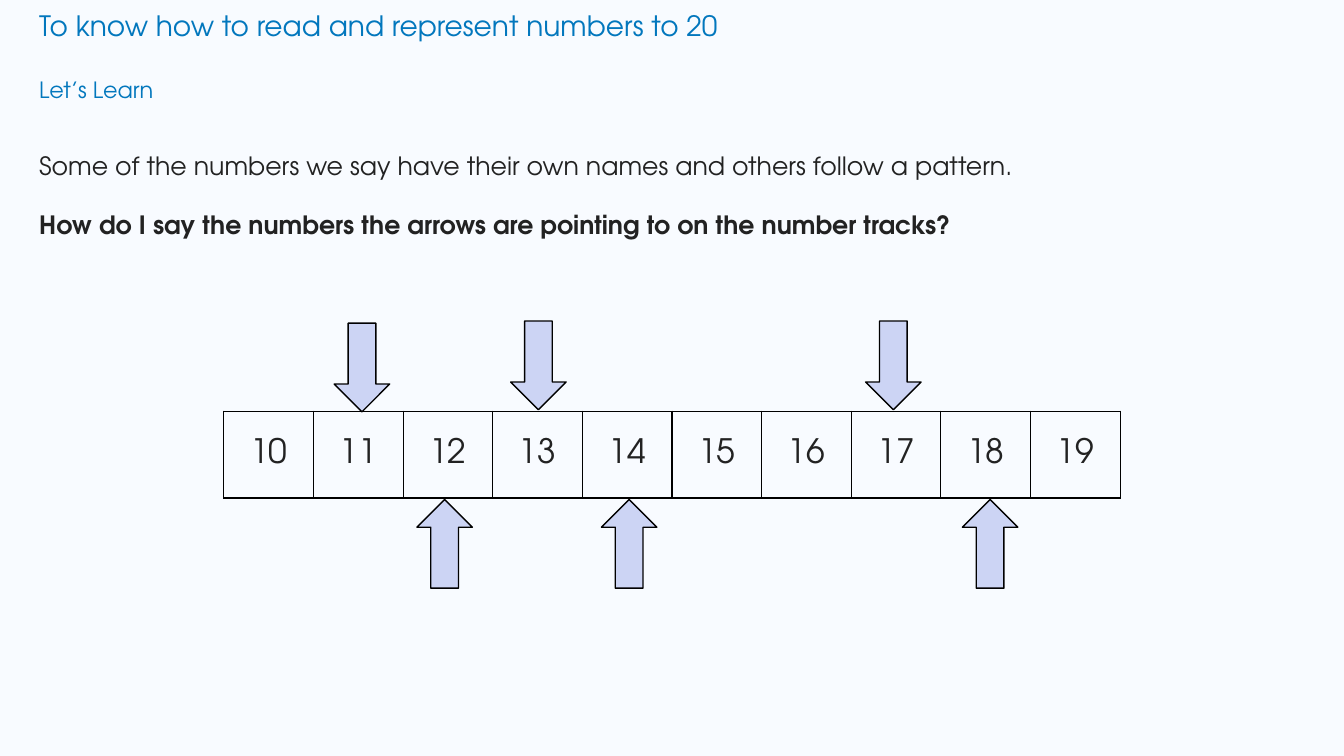
from dataclasses import dataclass

from lxml import etree
from pptx import Presentation
from pptx import util as u
from pptx.dml.color import RGBColor
from pptx.enum import shapes, text
from pptx.oxml import ns

PX = 9144  # EMU per px, 100 px to the inch
FONT = "TeX Gyre Adventor"
COLOURS = {
    "background": "F8FBFF",
    "heading": "0277BD",
    "body": "222222",
    "arrow": "CCD4F4",
    "line": "000000",
}
DOWN, UP = 90, 270
ARROW_LENGTH, ARROW_WIDTH = 88, 55


@dataclass
class TextBlock:
    left: int
    top: int
    width: int
    height: int
    size: int
    colour: str
    lines: list[tuple[str, bool]]  # wording, bold
    spacing: float = 1.0


@dataclass
class Arrow:
    left: int
    top: int
    rotation: int


@dataclass
class NumberTrack:
    left: int
    top: int
    width: int
    height: int
    numbers: range


TEXT_BLOCKS = [
    TextBlock(29, 4, 1234, 44, 20, "heading",
              [("To know how to read and represent numbers to 20", False)]),
    TextBlock(29, 71, 297, 46, 16, "heading", [("Let’s Learn", False)]),
    TextBlock(29, 129, 1284, 127, 18, "body", [
        ("Some of the numbers we say have their own names and others follow a pattern.", False),
        ("How do I say the numbers the arrows are pointing to on the number tracks?", True),
    ], 1.5),
]
TRACK = NumberTrack(222, 408, 889, 86, range(10, 20))
ARROWS = [
    Arrow(315, 337, DOWN),
    Arrow(490, 335, DOWN),
    Arrow(397, 512, UP),
    Arrow(842, 335, DOWN),
    Arrow(580, 512, UP),
    Arrow(938, 512, UP),
]


def emu(*lengths: int) -> list[u.Emu]:
    return [u.Emu(length * PX) for length in lengths]


def rgb(name: str) -> RGBColor:
    return RGBColor.from_string(COLOURS[name])


def write(para, wording: str, size: int, colour: str, bold: bool = False) -> None:
    span = para.add_run()
    span.text = wording
    for name, value in {"name": FONT, "size": u.Pt(size), "bold": bold}.items():
        setattr(span.font, name, value)
    span.font.color.rgb = rgb(colour)


def add_text(page, block: TextBlock) -> None:
    box = page.shapes.add_textbox(*emu(block.left, block.top, block.width, block.height))
    frame = box.text_frame
    frame.word_wrap = True
    for index, (wording, bold) in enumerate(block.lines):
        para = frame.add_paragraph() if index else frame.paragraphs[0]
        para.line_spacing = block.spacing
        para.space_before = u.Pt(10 if index else 0)
        write(para, wording, block.size, block.colour, bold)


def add_borders(cell) -> None:
    properties = cell._tc.get_or_add_tcPr()
    for index, side in enumerate(("lnL", "lnR", "lnT", "lnB")):
        line = etree.Element(ns.qn(f"a:{side}"), w=str(u.Pt(1)))
        fill = etree.SubElement(line, ns.qn("a:solidFill"))
        etree.SubElement(fill, ns.qn("a:srgbClr"), val=COLOURS["line"])
        properties.insert(index, line)


def add_track(page, track: NumberTrack) -> None:
    frame = page.shapes.add_table(
        1, len(track.numbers), *emu(track.left, track.top, track.width, track.height))
    table = frame.table
    table.first_row = table.horz_banding = False
    for cell, number in zip(table.iter_cells(), track.numbers):
        cell.vertical_anchor = text.MSO_ANCHOR.MIDDLE
        cell.fill.background()
        add_borders(cell)
        para = cell.text_frame.paragraphs[0]
        para.alignment = text.PP_ALIGN.CENTER
        write(para, str(number), 24, "body")


def add_arrow(page, arrow: Arrow) -> None:
    shape = page.shapes.add_shape(
        shapes.MSO_SHAPE.RIGHT_ARROW,
        *emu(arrow.left, arrow.top, ARROW_LENGTH, ARROW_WIDTH))
    shape.rotation = arrow.rotation
    shape.shadow.inherit = False
    shape.fill.solid()
    shape.fill.fore_color.rgb = rgb("arrow")
    shape.line.color.rgb = rgb("line")
    shape.line.width = u.Pt(1)


def main() -> None:
    deck = Presentation()
    deck.slide_width, deck.slide_height = emu(1333, 750)
    page = deck.slides.add_slide(deck.slide_layouts[6])
    page.background.fill.solid()
    page.background.fill.fore_color.rgb = rgb("background")
    for block in TEXT_BLOCKS:
        add_text(page, block)
    add_track(page, TRACK)
    for arrow in ARROWS:
        add_arrow(page, arrow)
    deck.save("out.pptx")


if __name__ == "__main__":
    main()
